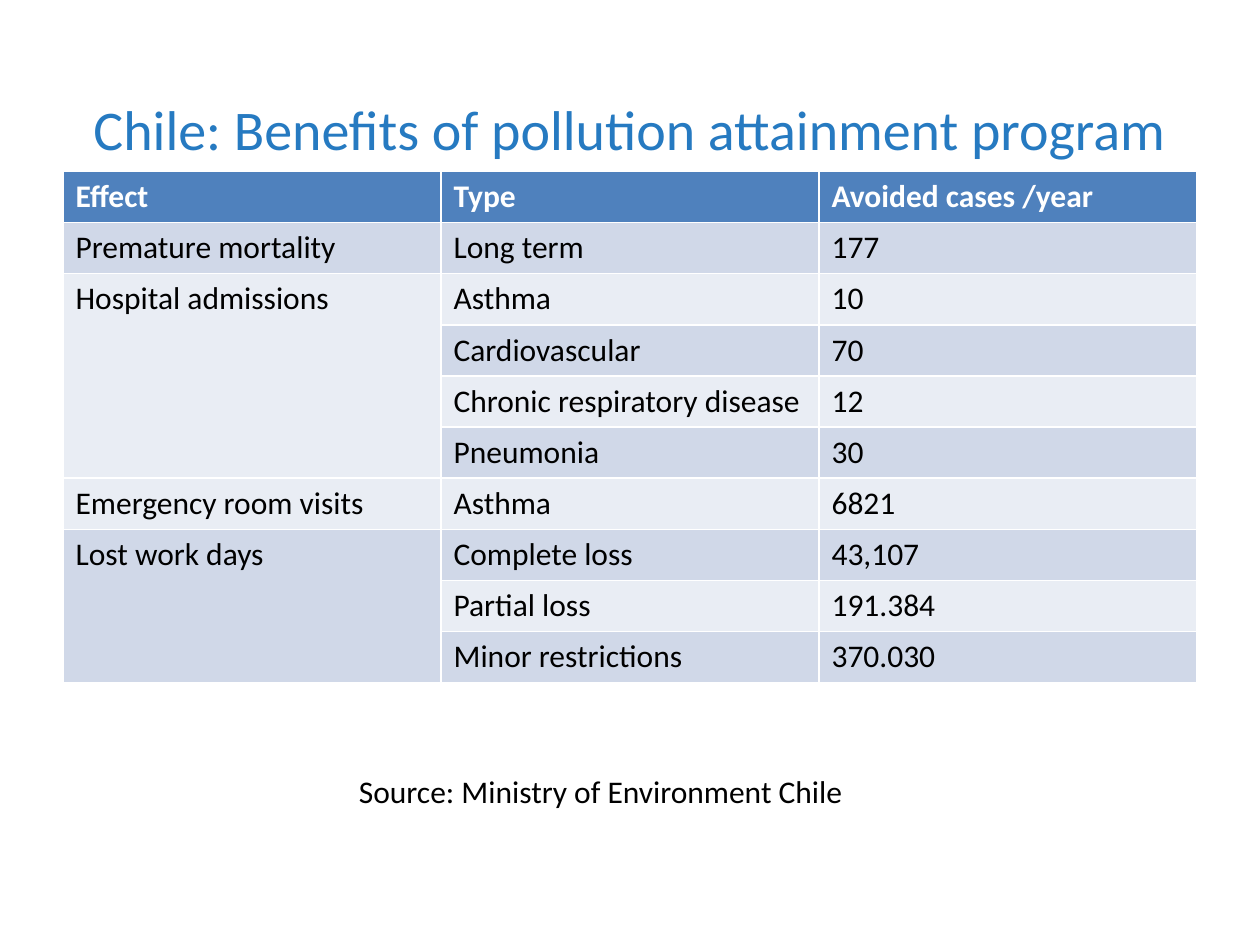
from dataclasses import dataclass

import pptx
import pptx.dml.color
import pptx.enum.text
import pptx.util

Inches = pptx.util.Inches
Anchor = pptx.enum.text.MSO_ANCHOR
Align = pptx.enum.text.PP_ALIGN


@dataclass(frozen=True)
class Theme:
    font: str = "Calibri"
    title_size: int = 32
    text_size: int = 18
    title: str = "267AC1"
    text: str = "000000"
    header_text: str = "FFFFFF"
    header_fill: str = "4F81BD"
    bands: tuple[str, str] = ("E9EDF4", "D0D8E8")


@dataclass(frozen=True)
class Effect:
    name: str
    cases: tuple[tuple[str, str], ...]


THEME = Theme()
HEADERS = ("Effect", "Type", "Avoided cases /year")
EFFECTS = (
    Effect("Premature mortality", (("Long term", "177"),)),
    Effect("Hospital admissions", (
        ("Asthma", "10"),
        ("Cardiovascular", "70"),
        ("Chronic respiratory disease", "12"),
        ("Pneumonia", "30"),
    )),
    Effect("Emergency room visits", (("Asthma", "6821"),)),
    Effect("Lost work days", (
        ("Complete loss", "43,107"),
        ("Partial loss", "191.384"),
        ("Minor restrictions", "370.030"),
    )),
)


def write(tf, text: str, size: int, color: str, bold: bool = False) -> None:
    p = tf.paragraphs[0]
    r = p.add_run()
    r.text = text
    formats = {"name": THEME.font, "size": pptx.util.Pt(size), "bold": bold}
    for name, value in formats.items():
        setattr(r.font, name, value)
    r.font.color.rgb = pptx.dml.color.RGBColor.from_string(color)


def fill_cell(cell, text: str, fill: str, color: str, bold: bool = False) -> None:
    cell.fill.solid()
    cell.fill.fore_color.rgb = pptx.dml.color.RGBColor.from_string(fill)
    if text:
        write(cell.text_frame, text, THEME.text_size, color, bold)


def add_title(s, text: str) -> None:
    sp = s.shapes.title
    box = {"left": 0.5, "top": 0.39, "width": 9, "height": 1.25}
    for name, value in box.items():
        setattr(sp, name, Inches(value))
    tf = sp.text_frame
    tf.vertical_anchor = Anchor.MIDDLE
    tf.paragraphs[0].alignment = Align.CENTER
    write(tf, text, THEME.title_size, THEME.title)


def add_effects_table(s, effects: tuple[Effect, ...]) -> None:
    row_count = 1 + sum(len(effect.cases) for effect in effects)
    table = s.shapes.add_table(
        row_count, len(HEADERS), Inches(0.5), Inches(1.36), Inches(9), Inches(4.06)
    ).table
    for col, header in enumerate(HEADERS):
        fill_cell(table.cell(0, col), header, THEME.header_fill, THEME.header_text, True)
    row = 1
    for effect in effects:
        first = row
        for kind, count in effect.cases:
            name = effect.name if row == first else ""
            for col, text in enumerate((name, kind, count)):
                fill_cell(table.cell(row, col), text, THEME.bands[row % 2], THEME.text)
            row += 1
        if row - first > 1:
            table.cell(first, 0).merge(table.cell(row - 1, 0))


def add_source(s, text: str) -> None:
    sp = s.shapes.add_textbox(Inches(2.75), Inches(6.08), Inches(4.08), Inches(0.4))
    tf = sp.text_frame
    tf.word_wrap = False
    tf.auto_size = pptx.enum.text.MSO_AUTO_SIZE.SHAPE_TO_FIT_TEXT
    write(tf, text, THEME.text_size, THEME.text)


def main() -> None:
    prs = pptx.Presentation()
    prs.slide_width, prs.slide_height = Inches(10), Inches(7.5)
    s = prs.slides.add_slide(prs.slide_layouts[5])
    add_title(s, "Chile: Benefits of pollution attainment program")
    add_effects_table(s, EFFECTS)
    add_source(s, "Source: Ministry of Environment Chile")
    prs.save("out.pptx")


if __name__ == "__main__":
    main()
